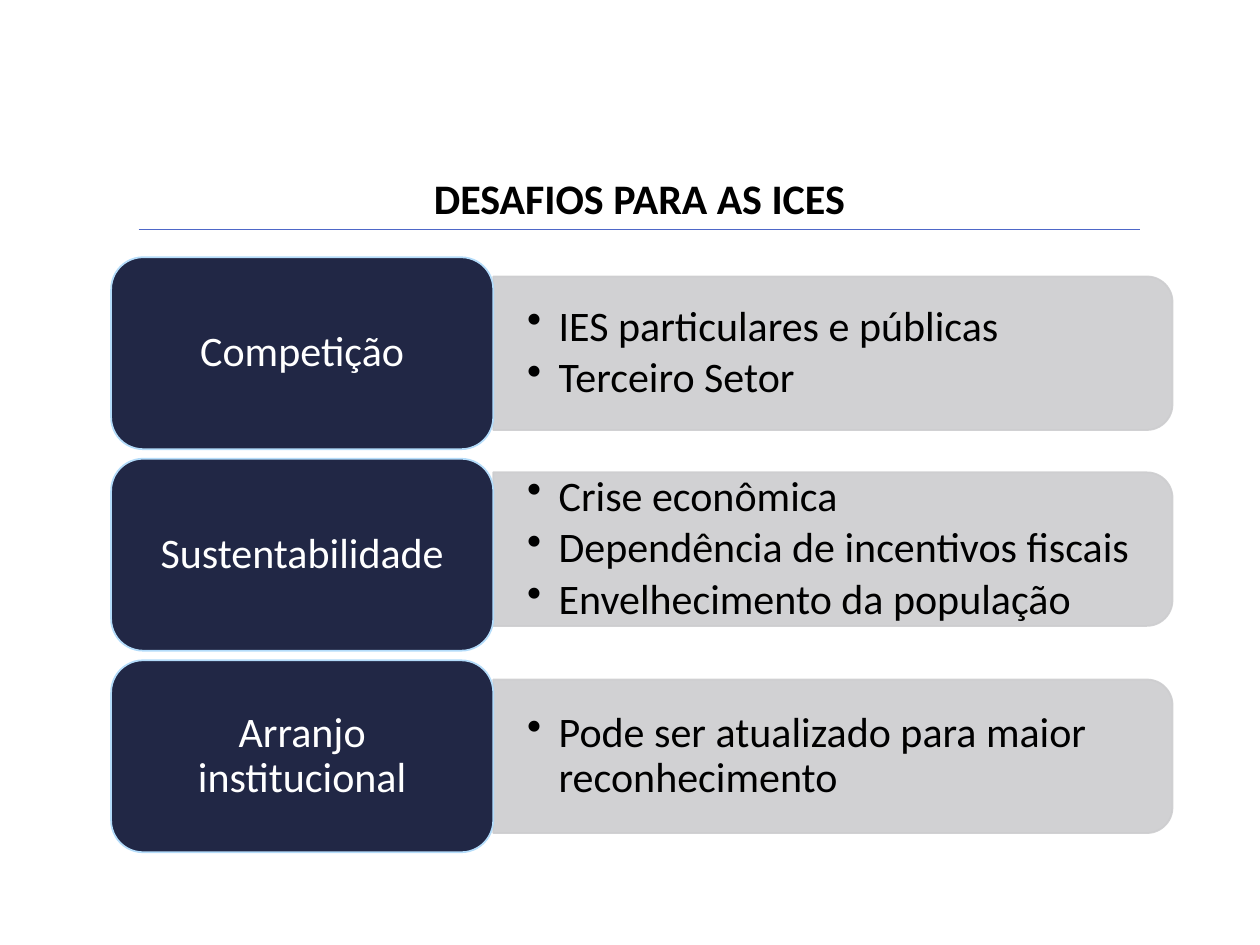
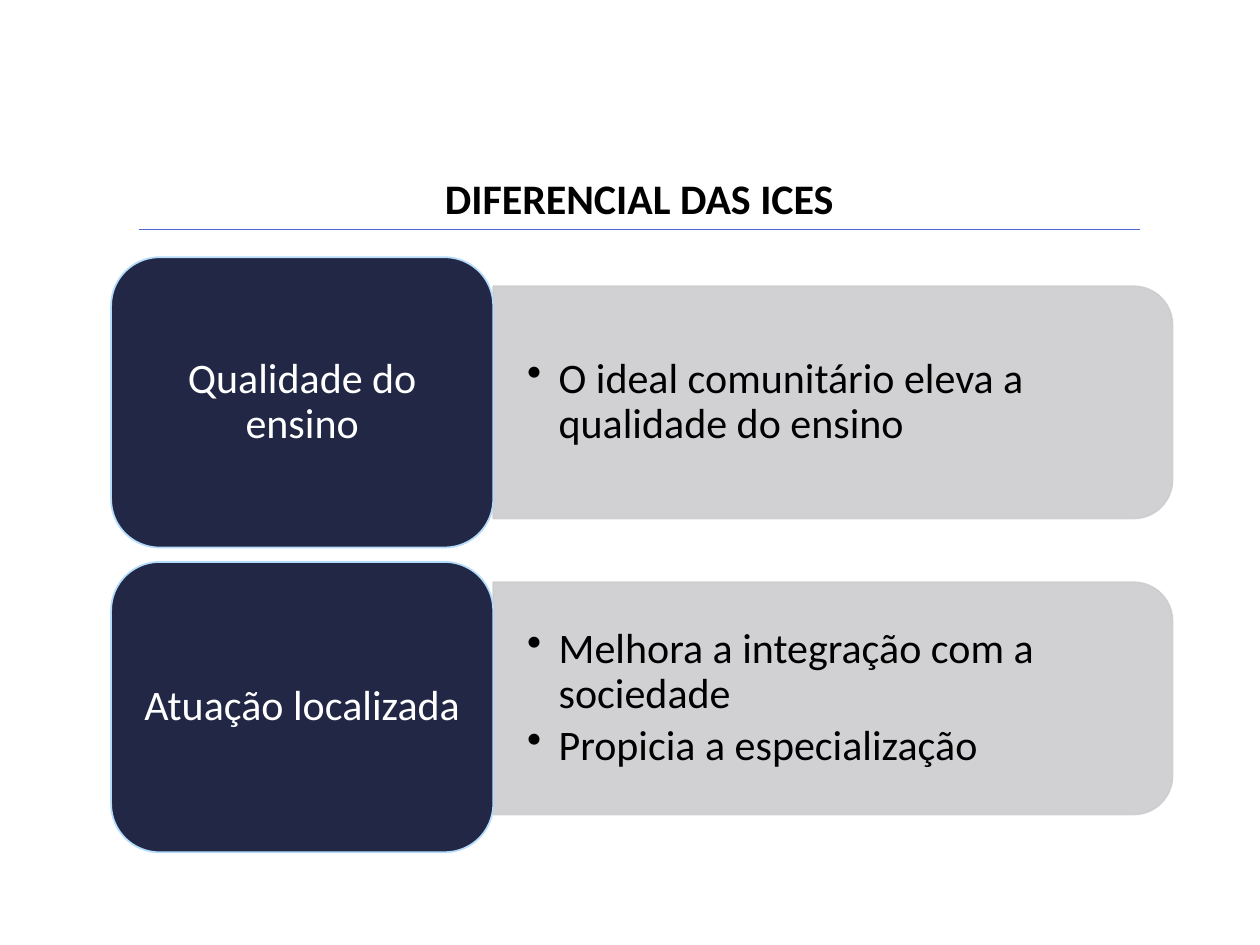
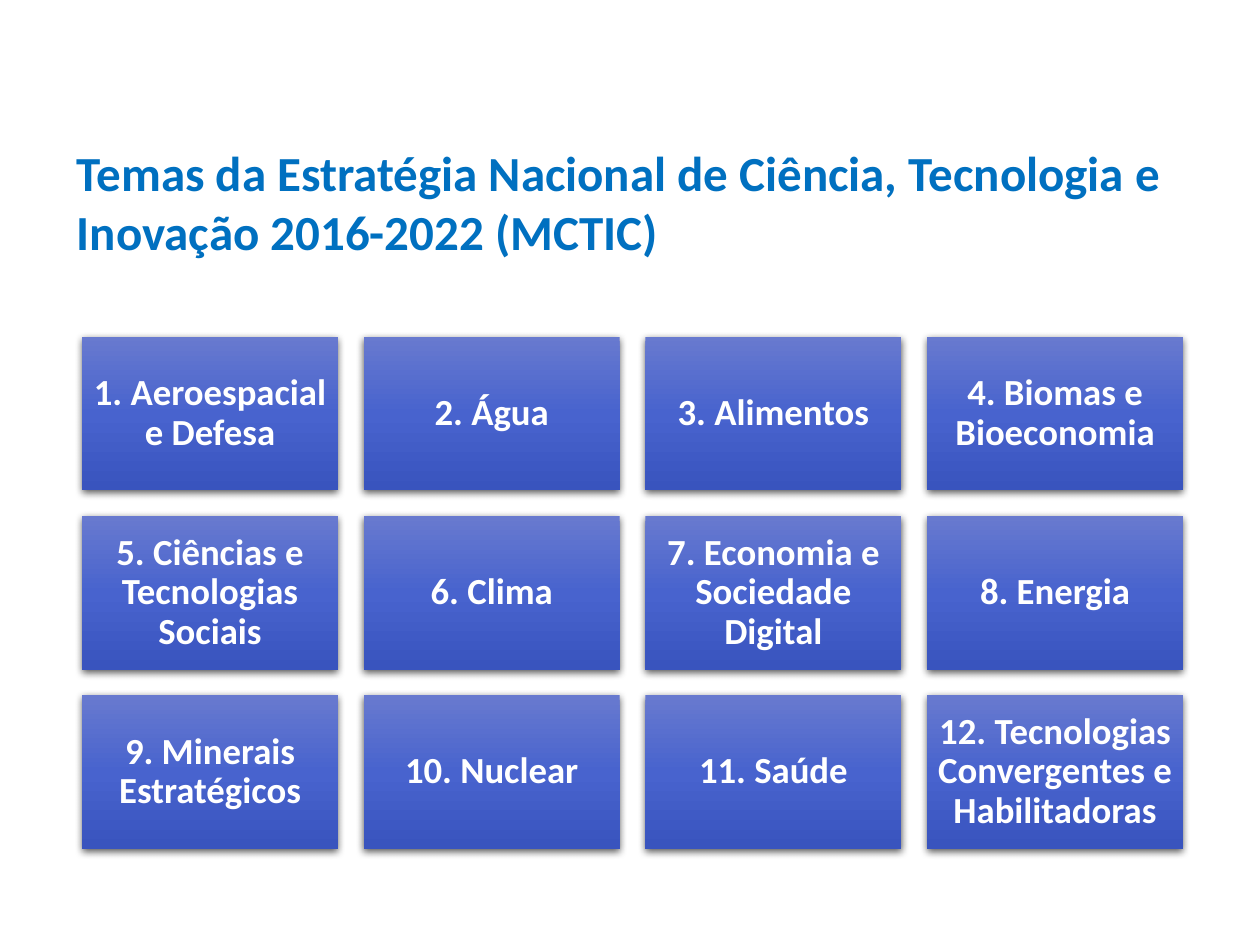
import copy

import pptx
import pptx.dml.color
import pptx.enum.shapes
import pptx.enum.text
import pptx.oxml
import pptx.oxml.ns
import pptx.util

Pt = pptx.util.Pt
RGBColor = pptx.dml.color.RGBColor
Shape = pptx.enum.shapes.MSO_SHAPE
Align = pptx.enum.text.PP_ALIGN
Anchor = pptx.enum.text.MSO_ANCHOR
qn = pptx.oxml.ns.qn

FONT = "Calibri"
BLACK = RGBColor(0x00, 0x00, 0x00)
WHITE = RGBColor(0xFF, 0xFF, 0xFF)
NAVY = RGBColor(0x21, 0x27, 0x45)
SKY = RGBColor(0xB4, 0xDC, 0xFA)
GREY = RGBColor(0xCD, 0xCD, 0xCF)
RULE_BLUE = RGBColor(0x4E, 0x67, 0xC8)
HEADING_BLUE = RGBColor(0x00, 0x70, 0xC0)
TILE_GRADIENT = [
    (0, RGBColor(0x68, 0x7A, 0xCF)),
    (0.5, RGBColor(0x48, 0x63, 0xCE)),
    (1, RGBColor(0x39, 0x54, 0xBE)),
]

HEADING_BOX = (79.2, 95, 572.4, 36)
THEMES_HEADING_BOX = (36.7, 77.8, 657.4, 75)
TOPICS_BOX = (63.5, 147, 606.5, 340)
THEMES_BOX = (46.9, 192.4, 629.2)

CHALLENGES = [
    ("Competição", ["IES particulares e públicas", "Terceiro Setor"], 0),
    ("Sustentabilidade", ["Crise econômica", "Dependência de incentivos fiscais",
                          "Envelhecimento da população"], -3.2),
    ("Arranjo institucional", ["Pode ser atualizado para maior reconhecimento"], 0),
]
STRENGTHS = [
    ("Qualidade do ensino", ["O ideal comunitário eleva a qualidade do ensino"], 0),
    ("Atuação localizada", ["Melhora a integração com a sociedade",
                            "Propicia a especialização"], -5),
]
THEMES = [
    "Aeroespacial e Defesa", "Água", "Alimentos", "Biomas e Bioeconomia",
    "Ciências e Tecnologias Sociais", "Clima", "Economia e Sociedade Digital", "Energia",
    "Minerais Estratégicos", "Nuclear", "Saúde", "Tecnologias Convergentes e Habilitadoras",
]


def points(*lengths):
    return [Pt(length) for length in lengths]


def drawing_xml(tag, attributes, inner=""):
    return pptx.oxml.parse_xml(
        f'<a:{tag} {pptx.oxml.ns.nsdecls("a")} {attributes}>{inner}</a:{tag}>')


def write(paragraph, text, size, color, bold=False, align=Align.LEFT, spacing=0.9):
    paragraph.alignment = align
    paragraph.line_spacing = spacing
    run = paragraph.add_run()
    run.text = text
    run.font.name = FONT
    run.font.size = Pt(size)
    run.font.bold = bold
    run.font.color.rgb = color


def prepare_frame(frame, anchor, side=7.2, edge=3.6):
    frame.word_wrap = True
    frame.auto_size = pptx.enum.text.MSO_AUTO_SIZE.NONE
    frame.vertical_anchor = anchor
    frame.margin_left = frame.margin_right = Pt(side)
    frame.margin_top = frame.margin_bottom = Pt(edge)


def add_titled_slide(deck, heading, box, size, color, align):
    slide = deck.slides.add_slide(deck.slide_layouts[5])
    title = slide.shapes.title
    title.left, title.top, title.width, title.height = points(*box)
    prepare_frame(title.text_frame, Anchor.TOP)
    write(title.text_frame.paragraphs[0], heading, size, color, True, align, 1.0)
    return slide


def add_rule(slide, left, y, width):
    rule = slide.shapes.add_connector(
        pptx.enum.shapes.MSO_CONNECTOR.STRAIGHT, *points(left, y, left + width, y))
    rule.line.color.rgb = RULE_BLUE
    rule.line.width = Pt(0.5)
    rule._element.spPr.append(drawing_xml("effectLst", ""))


def add_filled_shape(slide, kind, box, fill, line):
    shape = slide.shapes.add_shape(kind, *points(*box))
    shape.shadow.inherit = False
    shape.fill.solid()
    shape.fill.fore_color.rgb = fill
    shape.line.color.rgb = line
    shape.line.width = Pt(1)
    return shape


def add_detail_panel(slide, left, top, width, height, details):
    turned_box = (left + (width - height) / 2, top + (height - width) / 2, height, width)
    panel = add_filled_shape(slide, Shape.ROUND_2_SAME_RECTANGLE, turned_box, GREY, GREY)
    panel.rotation = 90
    for color in panel._element.spPr.iter(qn("a:srgbClr")):
        color.append(drawing_xml("alpha", 'val="90000"'))

    frame = slide.shapes.add_textbox(*points(left, top, width, height)).text_frame
    prepare_frame(frame, Anchor.MIDDLE, 19.4, 0)
    for index, detail in enumerate(details):
        paragraph = frame.paragraphs[0] if index == 0 else frame.add_paragraph()
        properties = paragraph._p.get_or_add_pPr()
        properties.set("marL", str(Pt(18)))
        properties.set("indent", str(Pt(-18)))
        properties.append(drawing_xml("buChar", 'char="•"'))
        if index:
            paragraph.space_before = Pt(3.6)
        write(paragraph, detail, 24, BLACK)


def add_topic_rows(slide, topics, left, top, width, height):
    gap_ratio = 0.05
    card_height = height / (len(topics) + gap_ratio * (len(topics) - 1))
    card_width = width * 0.36
    panel_height = card_height * 0.8
    for row, (topic, details, panel_shift) in enumerate(topics):
        card_top = top + row * card_height * (1 + gap_ratio)
        panel_top = card_top + (card_height - panel_height) / 2 + panel_shift
        add_detail_panel(slide, left + card_width, panel_top, width - card_width,
                         panel_height, details)
        card = add_filled_shape(slide, Shape.ROUNDED_RECTANGLE,
                                (left, card_top, card_width, card_height), NAVY, SKY)
        prepare_frame(card.text_frame, Anchor.MIDDLE)
        write(card.text_frame.paragraphs[0], topic, 24, WHITE, align=Align.CENTER)


def add_theme_tile(slide, left, top, width, height, label):
    tile = slide.shapes.add_shape(Shape.RECTANGLE, *points(left, top, width, height))
    tile.line.fill.background()
    tile.fill.gradient()
    tile.fill.gradient_angle = 270
    stop_list = tile._element.spPr.find(qn("a:gradFill")).find(qn("a:gsLst"))
    stop_list.insert(1, copy.deepcopy(stop_list[0]))
    for stop, (position, color) in zip(tile.fill.gradient_stops, TILE_GRADIENT):
        stop.position = position
        stop.color.rgb = color
    tile.shadow.inherit = False
    tile._element.spPr.find(qn("a:effectLst")).append(drawing_xml(
        "outerShdw",
        f'blurRad="{Pt(4.5)}" dist="{Pt(1.5)}" dir="5400000" algn="ctr" rotWithShape="0"',
        '<a:srgbClr val="000000"><a:alpha val="63000"/></a:srgbClr>'))
    prepare_frame(tile.text_frame, Anchor.MIDDLE, 5.5, 5.5)
    write(tile.text_frame.paragraphs[0], label, 21, WHITE, True, Align.CENTER)


def add_theme_grid(slide, themes, left, top, width):
    columns = 4
    gap_ratio = 0.1
    tile_width = width / (columns + gap_ratio * (columns - 1))
    tile_height = tile_width * 0.6
    gap = tile_width * gap_ratio
    for index, theme in enumerate(themes):
        row, column = divmod(index, columns)
        add_theme_tile(slide, left + column * (tile_width + gap),
                       top + row * (tile_height + gap),
                       tile_width, tile_height, f"{index + 1}. {theme}")


def add_topics_slide(deck, heading, topics):
    slide = add_titled_slide(deck, heading, HEADING_BOX, 24, BLACK, Align.CENTER)
    left, top, width, height = HEADING_BOX
    add_rule(slide, left, top + height, width)
    add_topic_rows(slide, topics, *TOPICS_BOX)


def add_themes_slide(deck, heading, themes):
    slide = add_titled_slide(deck, heading, THEMES_HEADING_BOX, 28, HEADING_BLUE, Align.LEFT)
    add_theme_grid(slide, themes, *THEMES_BOX)


def main():
    deck = pptx.Presentation()
    deck.slide_width, deck.slide_height = points(720, 540)
    add_topics_slide(deck, "DESAFIOS PARA AS ICES", CHALLENGES)
    add_topics_slide(deck, "DIFERENCIAL DAS ICES", STRENGTHS)
    add_themes_slide(
        deck,
        "Temas da Estratégia Nacional de Ciência, Tecnologia e Inovação 2016-2022 (MCTIC)",
        THEMES)
    deck.save("out.pptx")


if __name__ == "__main__":
    main()
